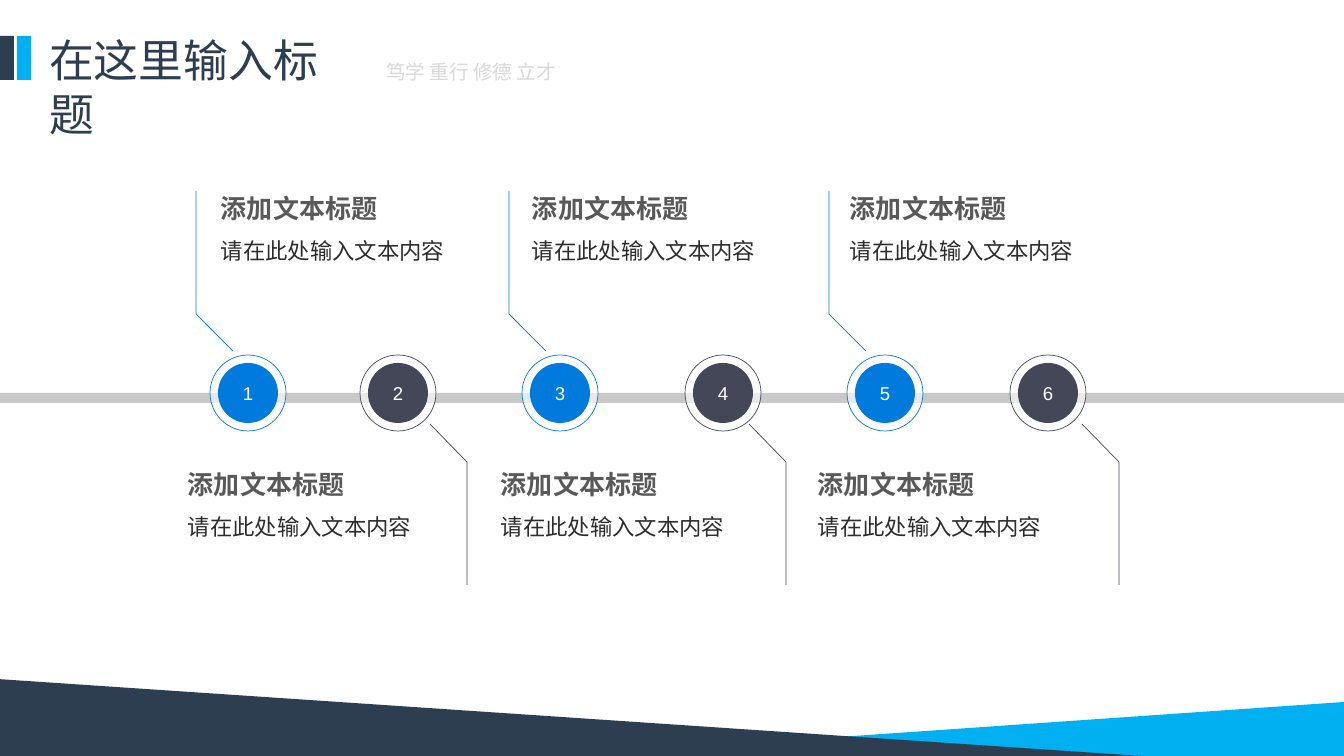
from lxml import etree
from pptx import Presentation, util as u
from pptx.dml.color import RGBColor
from pptx.enum import shapes, text
from pptx.oxml.ns import qn

TITLE = "在这里输入标题"
MOTTO = "笃学 重行 修德 立才"
HEADING = "添加文本标题"
BODY = "请在此处输入文本内容"
NAVY, CYAN, BLUE, SLATE = "2D3E50", "00B0F0", "007ADD", "444758"
CJK = "Noto Sans CJK SC"
# centre of circle, x of leader, left of text
STEPS = [
    (248, 196, 211), (398, 467, 178), (560, 509, 522),
    (723, 786, 491), (885, 829, 840), (1048, 1119, 808),
]
AXIS, RING, DISC, SLANT = 393, 76, 60, 37
UPPER = {"color": BLUE, "ends": (191, 314, 351), "slant": SLANT, "text_top": 172}
LOWER = {"color": SLATE, "ends": (585, 462, 424), "slant": -SLANT, "text_top": 448}
PX = 914400 / 100.8


def px(value):
    return u.Emu(round(value * PX))


def rgb(color):
    return RGBColor.from_string(color)


def style(shape, fill=None, line=None, opacity=100):
    shape.shadow.inherit = False
    if fill:
        shape.fill.solid()
        shape.fill.fore_color.rgb = rgb(fill)
        if opacity < 100:
            color = shape.fill._xPr.find(qn("a:solidFill"))[0]
            etree.SubElement(color, qn("a:alpha"), val=str(opacity * 1000))
    else:
        shape.fill.background()
    if line:
        shape.line.color.rgb = rgb(line)
        shape.line.width = u.Pt(0.5)
    else:
        shape.line.fill.background()
    return shape


def add_preset(page, kind, left, top, width, height, **look):
    shape = page.shapes.add_shape(kind, px(left), px(top), px(width), px(height))
    return style(shape, **look)


def add_outline(page, points, close, **look):
    builder = page.shapes.build_freeform(*points[0], scale=PX)
    builder.add_line_segments(points[1:], close=close)
    return style(builder.convert_to_shape(), **look)


def write(para, words, size, color, font="Arial", bold=False,
          align=text.PP_ALIGN.LEFT, spacing=None):
    para.alignment = align
    if spacing:
        para.line_spacing = spacing
    span = para.add_run()
    span.text = words
    span.font.size, span.font.bold, span.font.name = u.Pt(size), bold, font
    span.font.color.rgb = rgb(color)
    if font == CJK:
        etree.SubElement(span.font._element, qn("a:ea"), typeface=font)


def set_frame(box, anchor=text.MSO_ANCHOR.TOP):
    frame = box.text_frame
    frame.word_wrap, frame.auto_size = True, text.MSO_AUTO_SIZE.NONE
    frame.vertical_anchor = anchor
    frame.margin_left = frame.margin_right = px(10)
    frame.margin_top = frame.margin_bottom = px(5)
    return frame


def add_box(page, left, top, width, height):
    return set_frame(page.shapes.add_textbox(px(left), px(top), px(width), px(height)))


def add_step(page, number, center, bend, text_left):
    side = UPPER if number % 2 else LOWER
    oval = shapes.MSO_SHAPE.OVAL
    add_preset(page, oval, center - RING / 2, AXIS - RING / 2, RING, RING,
               fill="FFFFFF", opacity=60, line=side["color"])
    disc = add_preset(page, oval, center - DISC / 2, AXIS - DISC / 2, DISC, DISC,
                      fill=side["color"])
    frame = set_frame(disc, text.MSO_ANCHOR.MIDDLE)
    write(frame.paragraphs[0], str(number), 13.3, "FFFFFF", align=text.PP_ALIGN.CENTER)
    far, knee, near = side["ends"]
    add_outline(page, [(bend, far), (bend, knee), (bend + side["slant"], near)],
                close=False, line=side["color"])
    frame = add_box(page, text_left, side["text_top"], 310, 94)
    write(frame.paragraphs[0], HEADING, 18.6, "595959", bold=True, spacing=1.5)
    write(frame.add_paragraph(), BODY, 16, "2D2D2D", spacing=1.5)


def main():
    """Build the six-step timeline slide."""
    deck = Presentation()
    deck.slide_width, deck.slide_height = px(1344), px(756)
    page = deck.slides.add_slide(deck.slide_layouts[5])
    rectangle = shapes.MSO_SHAPE.RECTANGLE

    add_preset(page, rectangle, 17, 36, 14, 44, fill=CYAN)
    add_outline(page, [(565, 756), (1344, 702), (1344, 756)], close=True, fill=CYAN)
    add_outline(page, [(-3, 679), (1141, 756), (-3, 756)], close=True, fill=NAVY)
    add_preset(page, rectangle, 0, 36, 14, 44, fill=NAVY)

    title = page.shapes.title
    title.left, title.top, title.width, title.height = px(39), px(28), px(333), px(65)
    write(set_frame(title).paragraphs[0], TITLE, 32, NAVY, font=CJK)
    motto = add_box(page, 376, 55, 266, 34)
    write(motto.paragraphs[0], MOTTO, 14, "D9D9D9", font=CJK, align=text.PP_ALIGN.JUSTIFY)

    add_preset(page, rectangle, 0, AXIS, 1344, 10, fill="A6A6A6", opacity=60)
    for number, step in enumerate(STEPS, 1):
        add_step(page, number, *step)
    deck.save("out.pptx")


if __name__ == "__main__":
    main()
